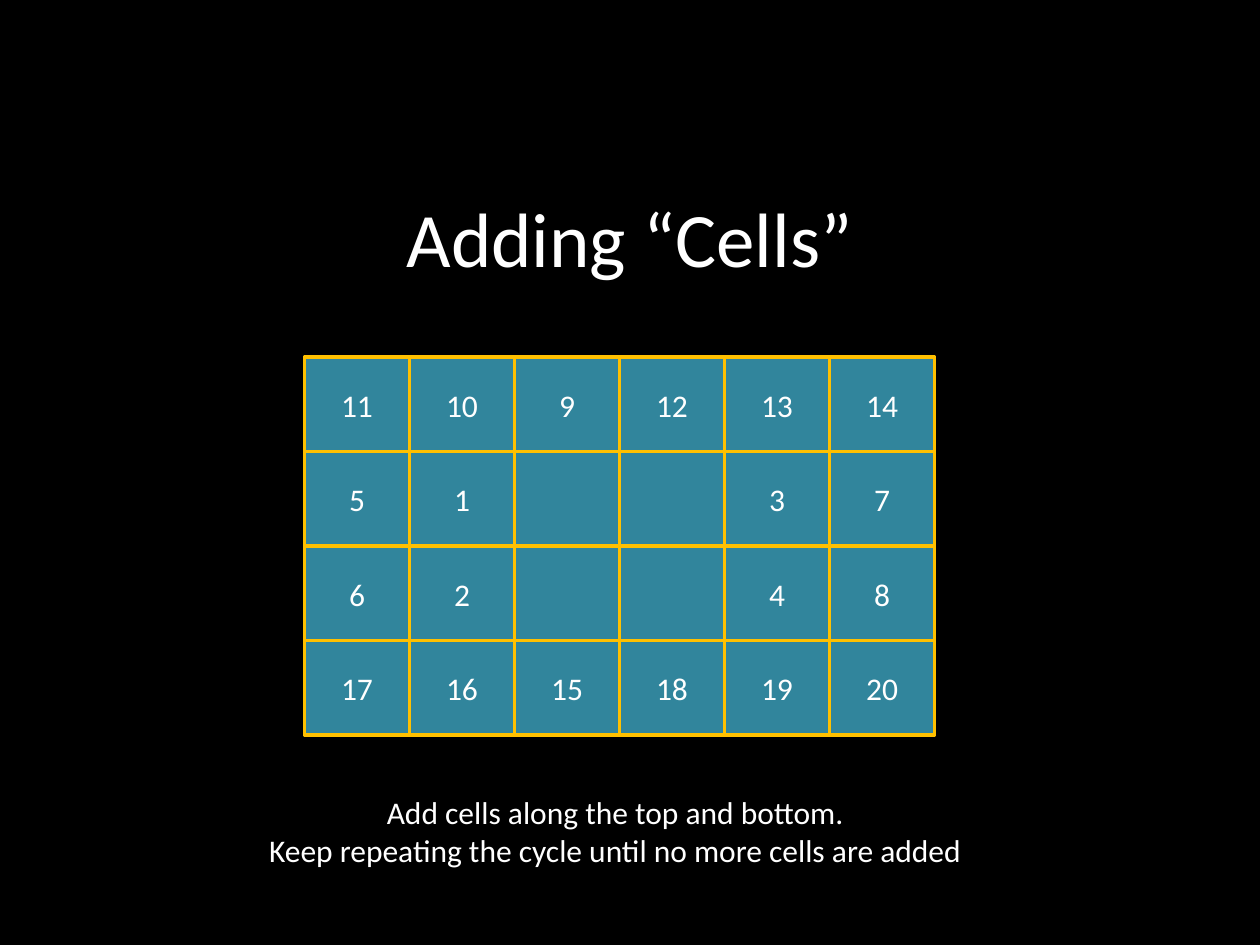
from pptx import Presentation
from pptx.dml.color import RGBColor
from pptx.enum.shapes import MSO_SHAPE
from pptx.enum.text import MSO_ANCHOR, MSO_AUTO_SIZE, PP_ALIGN
from pptx.util import Inches, Pt

BLACK = RGBColor(0x00, 0x00, 0x00)
WHITE = RGBColor(0xFF, 0xFF, 0xFF)
TEAL = RGBColor(0x31, 0x85, 0x9C)
GOLD = RGBColor(0xFF, 0xC0, 0x00)
FONT = "Calibri"
TITLE_ONLY = 5

WIDTH, HEIGHT = Inches(10), Inches(7.5)
COLUMN, ROW = WIDTH / 12, HEIGHT / 10

CELL_LABELS = [
    ["11", "10", "9", "12", "13", "14"],
    ["5", "1", "", "", "3", "7"],
    ["6", "2", "", "", "4", "8"],
    ["17", "16", "15", "18", "19", "20"],
]
CAPTION = [
    "Add cells along the top and bottom.",
    "Keep repeating the cycle until no more cells are added",
]


def grid_box(column, row, columns, rows):
    """Turn grid units into left, top, width and height."""
    return (round(column * COLUMN), round(row * ROW),
            round(columns * COLUMN), round(rows * ROW))


def write_line(para, text, size):
    para.alignment = PP_ALIGN.CENTER
    span = para.add_run()
    span.text = text
    span.font.name = FONT
    span.font.size = Pt(size)
    span.font.color.rgb = WHITE


def place_title(page, box, text):
    title = page.shapes.title
    title.left, title.top, title.width, title.height = box
    frame = title.text_frame
    frame.vertical_anchor = MSO_ANCHOR.MIDDLE
    write_line(frame.paragraphs[0], text, 44)


def place_cell(page, box, label):
    cell = page.shapes.add_shape(MSO_SHAPE.RECTANGLE, *box)
    cell.shadow.inherit = False
    cell.fill.solid()
    cell.fill.fore_color.rgb = TEAL
    cell.line.color.rgb = GOLD
    cell.line.width = Pt(2)
    if label:
        cell.text_frame.vertical_anchor = MSO_ANCHOR.MIDDLE
        write_line(cell.text_frame.paragraphs[0], label, 18)


def place_cells(page, box, labels):
    """Divide the box evenly into one square per label."""
    left, top, width, height = box
    cell_height = height / len(labels)
    for r, row in enumerate(labels):
        cell_width = width / len(row)
        for c, label in enumerate(row):
            cell_box = (round(left + c * cell_width), round(top + r * cell_height),
                        round(cell_width), round(cell_height))
            place_cell(page, cell_box, label)


def place_caption(page, box, lines):
    frame = page.shapes.add_textbox(*box).text_frame
    frame.word_wrap = False
    frame.auto_size = MSO_AUTO_SIZE.SHAPE_TO_FIT_TEXT
    for i, line in enumerate(lines):
        para = frame.add_paragraph() if i else frame.paragraphs[0]
        write_line(para, line, 18)


def main():
    deck = Presentation()
    deck.slide_width, deck.slide_height = WIDTH, HEIGHT
    page = deck.slides.add_slide(deck.slide_layouts[TITLE_ONLY])
    page.background.fill.solid()
    page.background.fill.fore_color.rgb = BLACK

    place_title(page, grid_box(0.6, 1.67, 10.8, 1.67), "Adding “Cells”")
    place_cells(page, grid_box(2.9, 3.78, 6, 4), CELL_LABELS)
    place_caption(page, grid_box(2.4, 8.33, 6.92, 0.95), CAPTION)
    deck.save("out.pptx")


if __name__ == "__main__":
    main()
